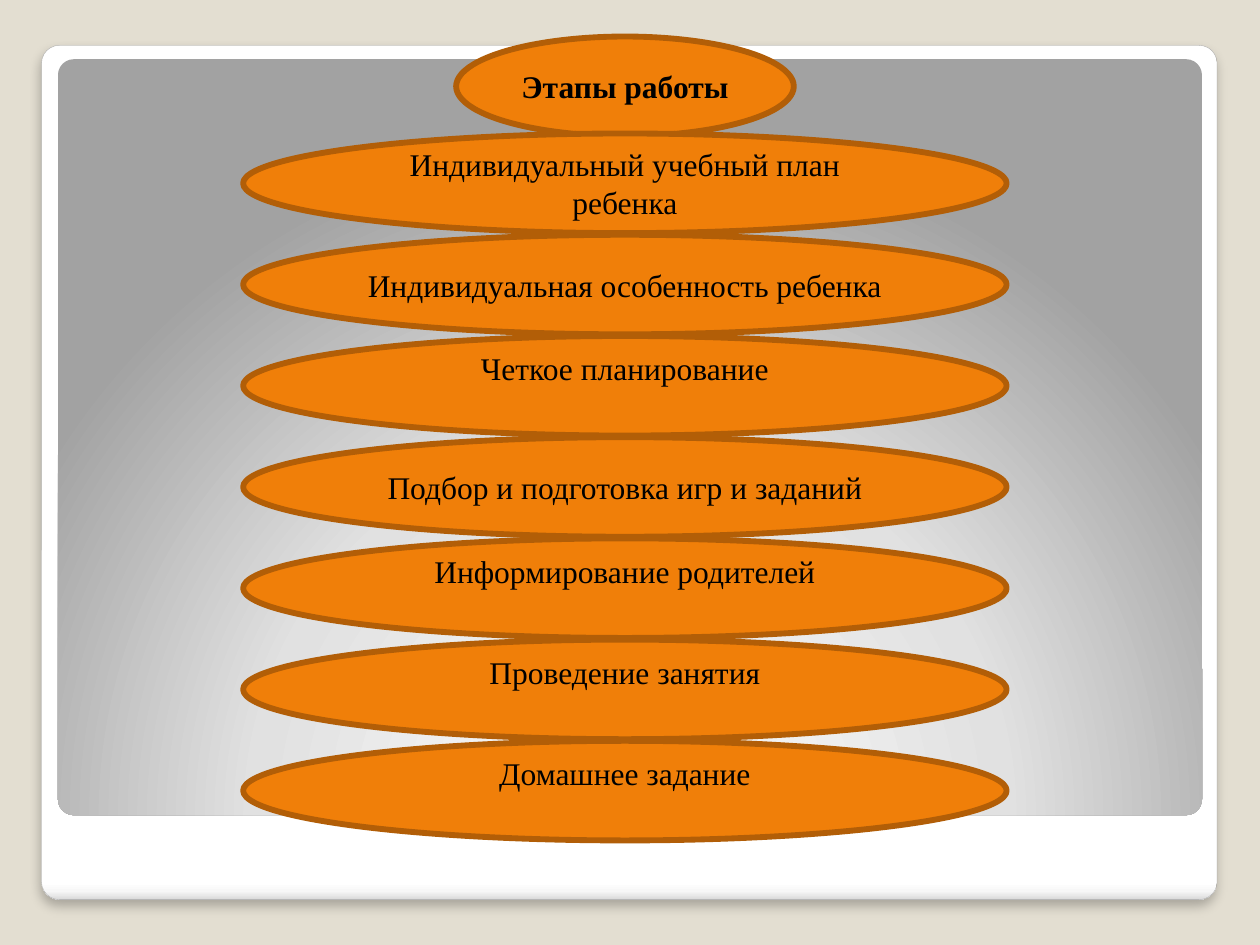
from pptx import Presentation
from pptx.dml.color import RGBColor
from pptx.enum.shapes import MSO_SHAPE as SHAPE
from pptx.enum.text import MSO_ANCHOR as ANCHOR, PP_ALIGN as ALIGN
from pptx.oxml import parse_xml
from pptx.oxml.ns import nsdecls, qn
from pptx.util import Inches, Pt

TITLE = "Этапы работы"
STEPS = [
    ("Индивидуальный учебный план ребенка", False),
    ("Индивидуальная особенность ребенка", False),
    ("Четкое планирование", True),
    ("Подбор и подготовка игр и заданий", False),
    ("Информирование родителей", True),
    ("Проведение занятия", True),
    ("Домашнее задание", True),
]
FRAME_STOPS = [(0, "FFFFFF"), (98, "FFFFFF"), (99, "F7F7F7"), (100, "DADADA")]
PANEL_STOPS = [(0, "FFFFFF"), (55, "E1E1E1"), (100, "A2A2A2")]
DOWNWARD = '<a:lin ang="5400000" scaled="0"/>'
CIRCULAR = ('<a:path path="circle"><a:fillToRect l="50000" t="175000" '
            'r="50000" b="-75000"/></a:path>')
SHADOW = (f'<a:outerShdw {nsdecls("a")} blurRad="{Pt(6)}" dist="{Pt(4)}" '
          'dir="5400000" algn="t" rotWithShape="0"><a:srgbClr val="000000">'
          '<a:alpha val="25000"/></a:srgbClr></a:outerShdw>')

BEIGE = RGBColor(0xE3, 0xDE, 0xD1)
GRAY = RGBColor(0xA4, 0xA4, 0xA4)
ORANGE = RGBColor(0xF0, 0x7F, 0x09)
BROWN = RGBColor(0xB2, 0x5E, 0x07)
BLACK = RGBColor(0, 0, 0)

CENTER, OVAL_H = 4.96, 0.79
TITLE_TOP, TITLE_W = 0.29, 2.68
FIRST_TOP, LAST_TOP, STEP_W = 1.06, 5.88, 6.06
INSET, RAISED_INSET = 0.05, 0.33


def add_panel(slide, box, stops, direction):
    sp = slide.shapes.add_shape(SHAPE.ROUNDED_RECTANGLE, *map(Inches, box))
    sp.adjustments[0] = 0.021
    sp.shadow.inherit = False
    sp.line.fill.background()
    sp.fill.background()
    gs = "".join(f'<a:gs pos="{pos * 1000}"><a:srgbClr val="{color}"/></a:gs>'
                 for pos, color in stops)
    gradient = parse_xml(f'<a:gradFill {nsdecls("a")} rotWithShape="1">'
                         f'<a:gsLst>{gs}</a:gsLst>{direction}</a:gradFill>')
    sp_pr = sp.element.spPr
    sp_pr.replace(sp_pr.find(qn("a:noFill")), gradient)
    return sp


def add_oval(slide, text, top, width, bold=False, raised=False):
    sp = slide.shapes.add_shape(SHAPE.OVAL, Inches(CENTER - width / 2),
                                Inches(top), Inches(width), Inches(OVAL_H))
    sp.shadow.inherit = False
    sp.fill.solid()
    sp.fill.fore_color.rgb = ORANGE
    sp.line.color.rgb = BROWN
    sp.line.width = Pt(3.35)
    tf = sp.text_frame
    tf.word_wrap = True
    tf.vertical_anchor = ANCHOR.MIDDLE
    tf.margin_bottom = Inches(RAISED_INSET if raised else INSET)
    p = tf.paragraphs[0]
    p.alignment = ALIGN.CENTER
    r = p.add_run()
    r.text = text
    r.font.name = "Times New Roman"
    r.font.size = Pt(18)
    r.font.bold = bold
    r.font.color.rgb = BLACK


def main():
    """Build the slide listing the stages of work as a column of ovals."""
    prs = Presentation()
    prs.slide_width, prs.slide_height = Inches(10), Inches(7.5)
    slide = prs.slides.add_slide(prs.slide_layouts[6])
    slide.background.fill.solid()
    slide.background.fill.fore_color.rgb = BEIGE

    frame = add_panel(slide, (0.33, 0.36, 9.33, 6.78), FRAME_STOPS, DOWNWARD)
    frame.line.color.rgb = GRAY
    frame.line.width = Pt(0.16)
    frame.element.spPr.find(qn("a:effectLst")).append(parse_xml(SHADOW))
    add_panel(slide, (0.46, 0.47, 9.08, 6), PANEL_STOPS, CIRCULAR)

    add_oval(slide, TITLE, TITLE_TOP, TITLE_W, bold=True)
    pitch = (LAST_TOP - FIRST_TOP) / (len(STEPS) - 1)
    for i, (text, raised) in enumerate(STEPS):
        add_oval(slide, text, FIRST_TOP + i * pitch, STEP_W, raised=raised)
    prs.save("out.pptx")


if __name__ == "__main__":
    main()
